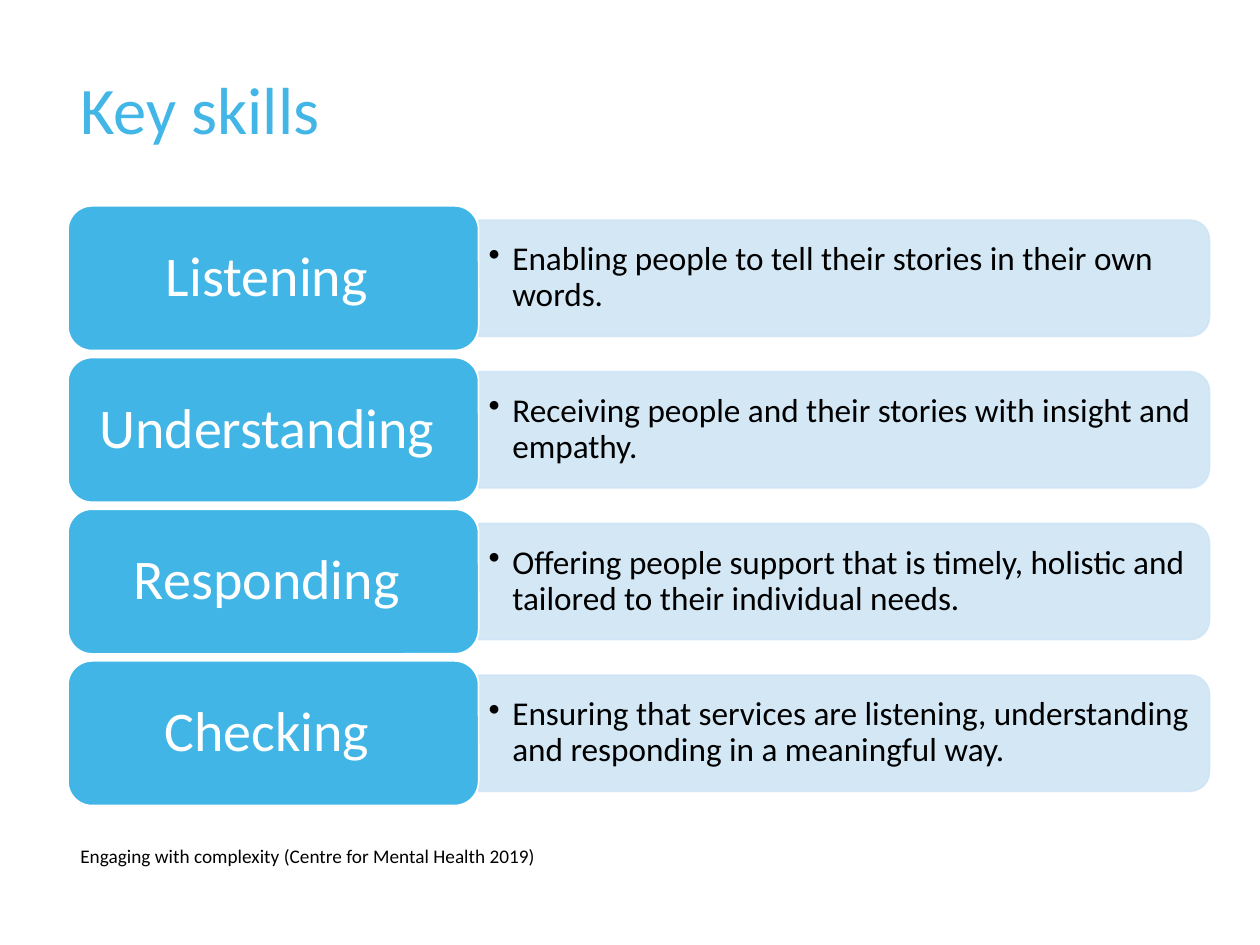
import pptx
import pptx.util
import pptx.dml.color
import pptx.enum.shapes
import pptx.enum.text
import pptx.oxml.ns
from lxml import etree

Cm = pptx.util.Cm
Pt = pptx.util.Pt
Shape = pptx.enum.shapes.MSO_SHAPE
Align = pptx.enum.text.PP_ALIGN
Anchor = pptx.enum.text.MSO_ANCHOR
qn = pptx.oxml.ns.qn

COLORS = {
    "title": "42B6E6",
    "card": "41B6E6",
    "panel": "CFE5F5",
    "white": "FFFFFF",
    "black": "000000",
}

SKILLS = [
    ("Listening ", "Enabling people to tell their stories in their own words."),
    ("Understanding ", "Receiving people and their stories with insight and empathy."),
    ("Responding ", "Offering people support that is timely, holistic and "
                    "tailored to their individual needs."),
    ("Checking ", "Ensuring that services are listening, understanding and "
                  "responding in a meaningful way."),
]


def rgb(name):
    return pptx.dml.color.RGBColor.from_string(COLORS[name])


def put_text(shape, text, size, color, align=Align.LEFT, anchor=Anchor.TOP,
             pad=(0.25, 0.13), lines=None, bullet=None):
    """Fill a shape with one paragraph; pad is (side, top) and bullet the indent, in cm."""
    frame = shape.text_frame
    frame.word_wrap = True
    frame.auto_size = pptx.enum.text.MSO_AUTO_SIZE.NONE
    frame.vertical_anchor = anchor
    frame.margin_left = frame.margin_right = Cm(pad[0])
    frame.margin_top = frame.margin_bottom = Cm(pad[1])
    para = frame.paragraphs[0]
    para.text = text
    para.alignment = align
    if lines:
        para.line_spacing = lines
    if bullet:
        props = para._p.get_or_add_pPr()
        props.set("marL", str(Cm(bullet)))
        props.set("indent", str(-Cm(bullet)))
        etree.SubElement(props, qn("a:buChar"), char="•")
    font = para.runs[0].font
    font.name = "Calibri"
    font.size = Pt(size)
    font.color.rgb = rgb(color)


def add_block(slide, kind, box, fill, line, alpha=None):
    """Add a filled preset shape, with alpha as a percentage."""
    block = slide.shapes.add_shape(kind, *map(Cm, box))
    block.shadow.inherit = False
    block.fill.solid()
    block.fill.fore_color.rgb = rgb(fill)
    block.line.color.rgb = rgb(line)
    block.line.width = Pt(1)
    if alpha:
        for color in block._element.spPr.iter(qn("a:srgbClr")):
            etree.SubElement(color, qn("a:alpha"), val=str(alpha * 1000))
    return block


def add_title(slide, box):
    title = slide.shapes.title
    title.left, title.top, title.width, title.height = map(Cm, box)
    put_text(title, "Key skills", 38, "title", lines=0.9)


def add_skill(slide, box, name, detail):
    """Draw a name card with its detail panel to the right."""
    left, top, width, height = box
    card = 8.28
    wide, tall = width - card, 2.34
    mid_x, mid_y = left + card + wide / 2, top + height / 2

    panel = add_block(slide, Shape.ROUND_2_SAME_RECTANGLE,
                      (mid_x - tall / 2, mid_y - wide / 2, tall, wide),
                      "panel", "panel", alpha=90)
    panel.rotation = 90

    note = slide.shapes.add_textbox(Cm(left + card), Cm(mid_y - 1.06),
                                    Cm(wide - 0.1), Cm(2.12))
    put_text(note, detail, 19, "black", anchor=Anchor.MIDDLE,
             pad=(0.2, 0.1), lines=0.9, bullet=0.48)

    label = add_block(slide, Shape.ROUNDED_RECTANGLE, (left, top, card, height),
                      "card", "white")
    put_text(label, name, 32, "white", align=Align.CENTER,
             anchor=Anchor.MIDDLE, pad=(0.33, 0.18), lines=0.9)


def add_skills(slide, box):
    """Stack the skills in equal rows."""
    left, top, width, height = box
    gap = 0.14
    row = (height - gap * (len(SKILLS) - 1)) / len(SKILLS)
    for i, (name, detail) in enumerate(SKILLS):
        add_skill(slide, (left, top + i * (row + gap), width, row), name, detail)


def add_source(slide, box):
    source = slide.shapes.add_textbox(*map(Cm, box))
    put_text(source, "Engaging with complexity (Centre for Mental Health 2019)",
             11, "black")


def main():
    deck = pptx.Presentation()
    deck.slide_width, deck.slide_height = Cm(25.4), Cm(19.05)
    slide = deck.slides.add_slide(deck.slide_layouts[5])
    add_title(slide, (1.37, 1.42, 23.01, 2.62))
    add_skills(slide, (1.37, 4.15, 23.01, 12.09))
    add_source(slide, (1.37, 16.89, 18.92, 0.74))
    deck.save("out.pptx")


if __name__ == "__main__":
    main()
